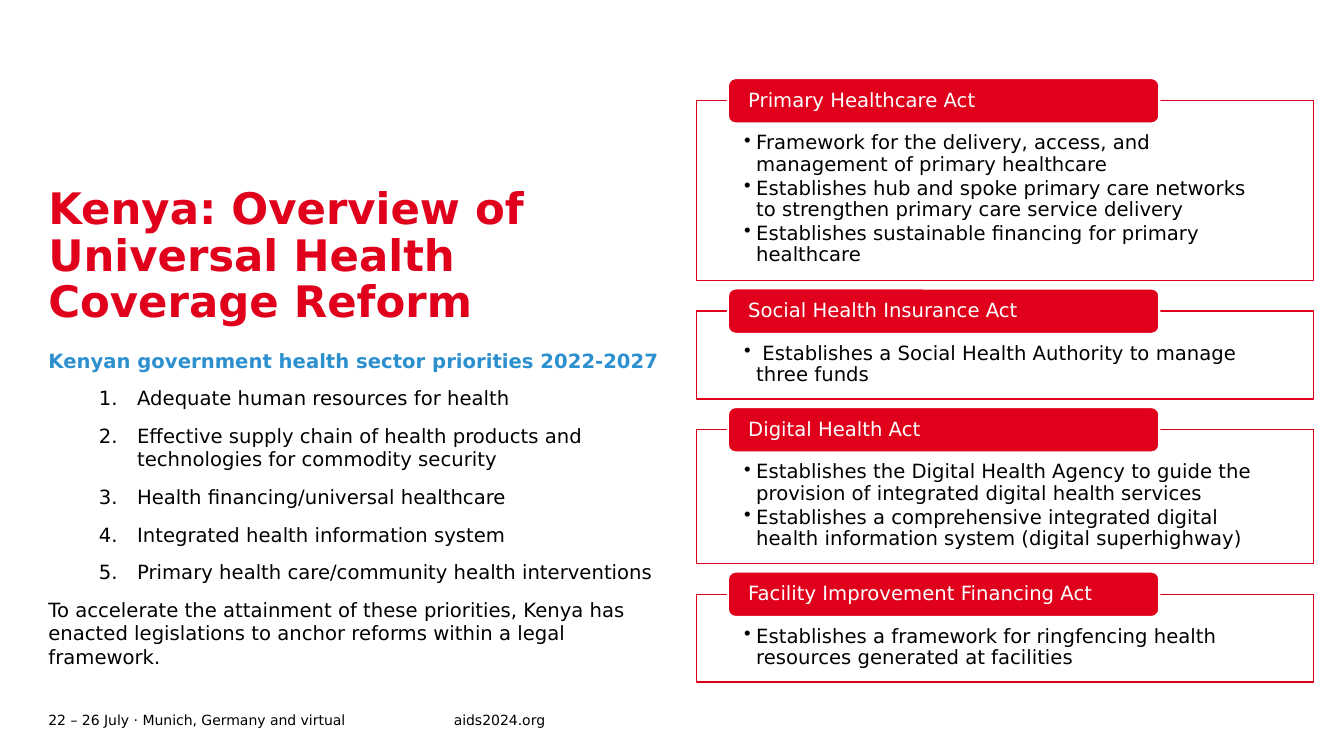
import lxml.etree
import pptx
import pptx.dml.color
import pptx.enum.shapes
import pptx.enum.text
import pptx.oxml.ns
import pptx.util

PRIORITIES = [
    "Adequate human resources for health",
    "Effective supply chain of health products and technologies for commodity security",
    "Health financing/universal healthcare",
    "Integrated health information system",
    "Primary health care/community health interventions",
]
ACTS = [
    ("Primary Healthcare Act", [
        "Framework for the delivery, access, and management of primary healthcare",
        "Establishes hub and spoke primary care networks to strengthen primary care service delivery",
        "Establishes sustainable financing for primary healthcare",
    ]),
    ("Social Health Insurance Act", [
        " Establishes a Social Health Authority to manage three funds",
    ]),
    ("Digital Health Act", [
        "Establishes the Digital Health Agency to guide the provision of integrated digital health services",
        "Establishes a comprehensive integrated digital health information system (digital superhighway)",
    ]),
    ("Facility Improvement Financing Act", [
        "Establishes a framework for ringfencing health resources generated at facilities",
    ]),
]
RED, BLUE, BLACK, WHITE = "E0001B", "2C90CF", "000000", "FFFFFF"


def colour(code):
    return pptx.dml.color.RGBColor.from_string(code)


def child(parent, tag, **attributes):
    return lxml.etree.SubElement(parent, pptx.oxml.ns.qn(tag), **attributes)


class SlideWriter:
    """Draws styled elements on one slide, placed in percent of its size."""

    font = "DejaVu Sans"

    def __init__(self, deck, layout):
        self.deck = deck
        self.page = deck.slides.add_slide(layout)

    def area(self, left, top, width, height):
        across, down = self.deck.slide_width / 100, self.deck.slide_height / 100
        return [round(v) for v in (left * across, top * down, width * across, height * down)]

    def frame(self, box, insets=(0, 0, 0, 0), middle=False):
        text = box.text_frame
        text.word_wrap = True
        text.auto_size = pptx.enum.text.MSO_AUTO_SIZE.NONE
        anchors = pptx.enum.text.MSO_ANCHOR
        text.vertical_anchor = anchors.MIDDLE if middle else anchors.TOP
        text.margin_left, text.margin_top, text.margin_right, text.margin_bottom = [
            pptx.util.Inches(inset) for inset in insets]
        return text

    def para(self, text, words, size=14, ink=BLACK, bold=False, bullet=("a:buNone", {}),
             indent=(0, 0), level=0, before=0, after=0, spacing=1.0):
        first = not text.paragraphs[0].runs
        para = text.paragraphs[0] if first else text.add_paragraph()
        properties = para._p.get_or_add_pPr()
        margin, hanging = indent
        properties.set("marL", str(pptx.util.Inches(margin)))
        properties.set("indent", str(pptx.util.Inches(hanging)))
        tag, attributes = bullet
        child(properties, tag, **attributes)
        para.level = level
        para.alignment = pptx.enum.text.PP_ALIGN.LEFT
        para.line_spacing = spacing
        para.space_before = pptx.util.Pt(0 if first else before)
        para.space_after = pptx.util.Pt(after)
        span = para.add_run()
        span.text = words
        span.font.name = self.font
        span.font.size = pptx.util.Pt(size)
        span.font.bold = bold
        span.font.color.rgb = colour(ink)

    def placeholder(self, index, area, middle=False):
        box = self.page.placeholders[index]
        box.left, box.top, box.width, box.height = self.area(*area)
        return self.frame(box, middle=middle)

    def label(self, words, area):
        box = self.page.shapes.add_textbox(*self.area(*area))
        self.para(self.frame(box, middle=True), words, size=10)

    def shape(self, kind, area, fill, line, weight):
        box = self.page.shapes.add_shape(kind, *self.area(*area))
        box.shadow.inherit = False
        box.fill.solid()
        box.fill.fore_color.rgb = colour(fill)
        box.line.color.rgb = colour(line)
        box.line.width = pptx.util.Pt(weight)
        return box

    def panel(self, heading, points, top, height):
        kinds = pptx.enum.shapes.MSO_SHAPE
        box = self.shape(kinds.RECTANGLE, (51.84, top, 45.9, height), WHITE, RED, 1)
        tint = next(box._element.spPr.iter(pptx.oxml.ns.qn("a:srgbClr")))
        child(tint, "a:alpha", val="90000")
        text = self.frame(box, (0.47, 0.32, 0.47, 0.11))
        for point in points:
            self.para(text, point, bullet=("a:buChar", {"char": "•"}),
                      indent=(0.12, -0.12), level=1, after=2, spacing=0.9)
        tab = self.shape(kinds.ROUNDED_RECTANGLE, (54.16, top - 3, 32.1, 6), RED, WHITE, 1.5)
        self.para(self.frame(tab, (0.18, 0, 0.18, 0), middle=True), heading,
                  ink=WHITE, spacing=0.9)


def main():
    deck = pptx.Presentation()
    deck.slide_width = pptx.util.Inches(13.33)
    deck.slide_height = pptx.util.Inches(7.5)
    writer = SlideWriter(deck, deck.slide_layouts[1])

    title = writer.placeholder(0, (3.6, 23.6, 43.3, 20.8), middle=True)
    writer.para(title, "Kenya: Overview of Universal Health Coverage Reform",
                size=31, ink=RED, bold=True, spacing=0.9)

    body = writer.placeholder(1, (3.6, 46.13, 46.36, 44.27))
    writer.para(body, "Kenyan government health sector priorities 2022-2027", ink=BLUE, bold=True)
    for priority in PRIORITIES:
        writer.para(body, priority, bullet=("a:buAutoNum", {"type": "arabicPeriod"}),
                    indent=(0.88, -0.38), level=1, before=10)
    writer.para(body, "To accelerate the attainment of these priorities, Kenya has enacted "
                "legislations to anchor reforms within a legal framework.", before=10)

    writer.label("22 – 26 July · Munich, Germany and virtual", (3.6, 93.6, 30.16, 3.2))
    writer.label("aids2024.org", (33.76, 93.6, 14.48, 3.2))

    top, gap = 13.33, 4.07
    for heading, points in ACTS:
        height = 5.55 + 6.07 * len(points)
        writer.panel(heading, points, top, height)
        top += height + gap

    deck.save("out.pptx")


if __name__ == "__main__":
    main()
